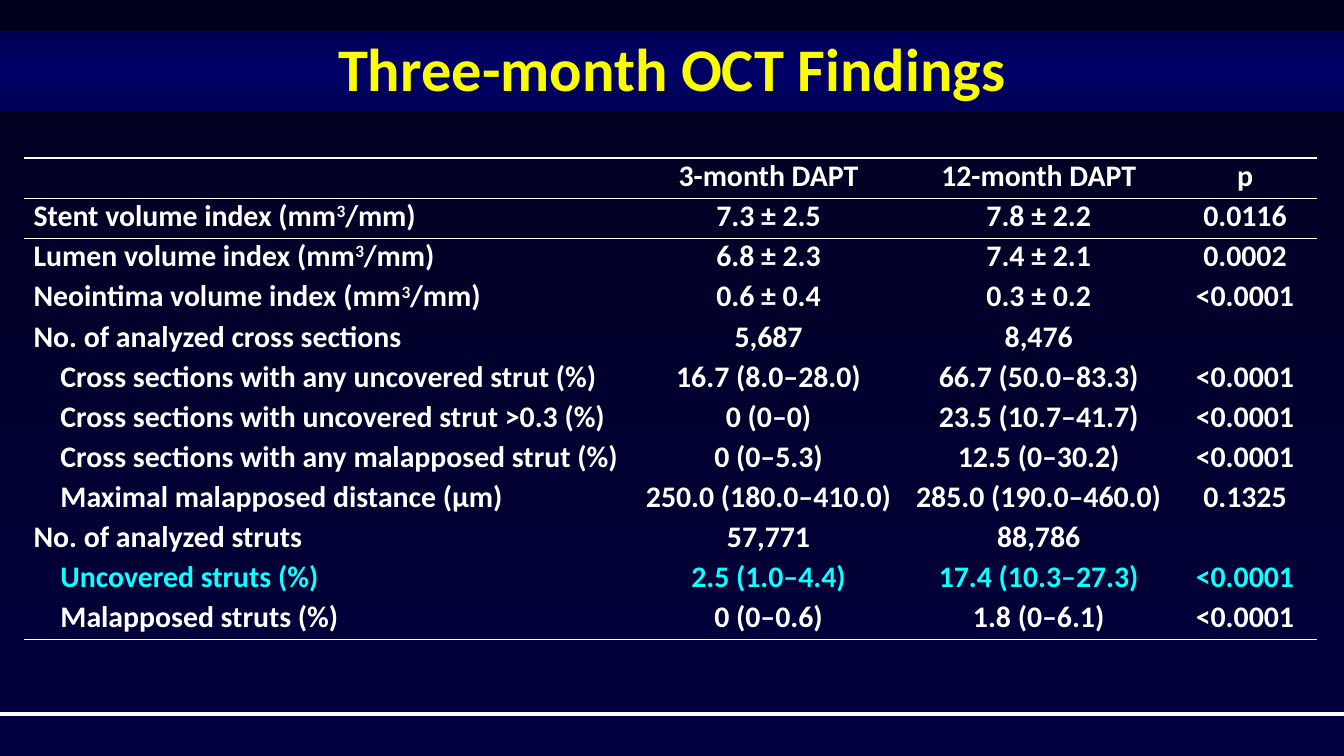
import copy

import pptx
import pptx.dml.color
import pptx.enum.shapes
import pptx.enum.text
import pptx.oxml.ns
import pptx.oxml.xmlchemy
import pptx.util

Pt = pptx.util.Pt
RGB = pptx.dml.color.RGBColor
ALIGN = pptx.enum.text.PP_ALIGN
qn = pptx.oxml.ns.qn
new_element = pptx.oxml.xmlchemy.OxmlElement

WHITE = RGB(0xFF, 0xFF, 0xFF)
YELLOW = RGB(0xFA, 0xFD, 0x00)
CYAN = RGB(0x0D, 0xFF, 0xFF)
NIGHT = RGB(0x00, 0x00, 0x1D)
NAVY = RGB(0x00, 0x00, 0x3E)
BAND_EDGE = RGB(0x00, 0x00, 0x57)
BAND_CORE = RGB(0x00, 0x00, 0x66)

SLIDE_W, SLIDE_H = 720, 405
COLUMN_WIDTHS = [326, 145.5, 144, 77]
ROW_HEIGHT = 21.5
INDENT = 14.4
SUPERSCRIPT_MARK = "^"

# Indent level, then the cells; text between two ^ marks is superscript.
FINDINGS = [
    (0, "", "3-month DAPT", "12-month DAPT", "p"),
    (0, "Stent volume index (mm^3^/mm)", "7.3 ± 2.5", "7.8 ± 2.2", "0.0116"),
    (0, "Lumen volume index (mm^3^/mm)", "6.8 ± 2.3", "7.4 ± 2.1", "0.0002"),
    (0, "Neointima volume index (mm^3^/mm)", "0.6 ± 0.4", "0.3 ± 0.2", "<0.0001"),
    (0, "No. of analyzed cross sections", "5,687", "8,476", ""),
    (1, "Cross sections with any uncovered strut (%)", "16.7 (8.0–28.0)", "66.7 (50.0–83.3)", "<0.0001"),
    (1, "Cross sections with uncovered strut >0.3 (%)", "0 (0–0)", "23.5 (10.7–41.7)", "<0.0001"),
    (1, "Cross sections with any malapposed strut (%)", "0 (0–5.3)", "12.5 (0–30.2)", "<0.0001"),
    (1, "Maximal malapposed distance (μm)", "250.0 (180.0–410.0)", "285.0 (190.0–460.0)", "0.1325"),
    (0, "No. of analyzed struts", "57,771", "88,786", ""),
    (1, "Uncovered struts (%)", "2.5 (1.0–4.4)", "17.4 (10.3–27.3)", "<0.0001"),
    (1, "Malapposed struts (%)", "0 (0–0.6)", "1.8 (0–6.1)", "<0.0001"),
]
HIGHLIGHTED_ROW = 10
RULED_BELOW = {0, 1, len(FINDINGS) - 1}


class SlideBuilder:
    font_name = "Calibri"
    title_size = 32.4
    table_size = 16
    rule_width = 1

    def __init__(self, slide):
        self.slide = slide

    def style_font(self, font, size, color):
        font.name = self.font_name
        font.size = Pt(size)
        font.bold = True
        font.color.rgb = color

    def color_stops(self, fill, colors):
        """Spread the colours evenly, from top to bottom."""
        fill.gradient_angle = 270
        for i, (stop, color) in enumerate(zip(fill.gradient_stops, colors)):
            stop.position = i / (len(colors) - 1)
            stop.color.rgb = color

    def background(self, top, bottom):
        fill = self.slide.background.fill
        fill.gradient()
        self.color_stops(fill, [top, bottom])

    def rule(self, y, width):
        line = self.slide.shapes.add_connector(
            pptx.enum.shapes.MSO_CONNECTOR.STRAIGHT, 0, Pt(y), Pt(SLIDE_W), Pt(y))
        line.line.color.rgb = WHITE
        line.line.width = Pt(width)
        line._element.spPr.append(new_element("a:effectLst"))

    def title_band(self, text, top, height):
        band = self.slide.shapes.add_shape(
            pptx.enum.shapes.MSO_SHAPE.RECTANGLE, 0, Pt(top), Pt(SLIDE_W), Pt(height))
        band.shadow.inherit = False
        band.line.fill.background()
        band.fill.gradient()
        first_stop = band._element.spPr.find(".//" + qn("a:gs"))
        first_stop.addnext(copy.deepcopy(first_stop))
        self.color_stops(band.fill, [BAND_EDGE, BAND_CORE, BAND_EDGE])

        frame = band.text_frame
        frame.word_wrap = True
        frame.vertical_anchor = pptx.enum.text.MSO_ANCHOR.MIDDLE
        frame.text = text
        heading = frame.paragraphs[0]
        heading.alignment = ALIGN.CENTER
        heading.line_spacing = 0.9
        self.style_font(heading.runs[0].font, self.title_size, YELLOW)

    def cell_borders(self, cell, ruled_sides):
        properties = cell._tc.get_or_add_tcPr()
        for i, side in enumerate("LRTB"):
            border = new_element("a:ln" + side)
            border.set("w", str(Pt(self.rule_width)))
            if side in ruled_sides:
                paint = new_element("a:solidFill")
                color = new_element("a:srgbClr")
                color.set("val", str(WHITE))
                paint.append(color)
            else:
                paint = new_element("a:noFill")
            border.append(paint)
            properties.insert(i, border)

    def cell_text(self, cell, text, color, alignment, indent):
        cell.margin_left = cell.margin_right = Pt(5)
        cell.margin_top = cell.margin_bottom = 0
        paragraph = cell.text_frame.paragraphs[0]
        paragraph.alignment = alignment
        if indent:
            paragraph._p.get_or_add_pPr().set("marL", str(Pt(indent)))
        if not text:
            # An empty cell keeps the table's text size so its row does not grow.
            end = new_element("a:endParaRPr")
            end.set("sz", str(self.table_size * 100))
            paragraph._p.append(end)
            return
        for i, part in enumerate(text.split(SUPERSCRIPT_MARK)):
            run = paragraph.add_run()
            run.text = part
            self.style_font(run.font, self.table_size, color)
            if i % 2:
                run.font._element.set("baseline", "30000")

    def findings_table(self, left, top):
        table = self.slide.shapes.add_table(
            len(FINDINGS), len(COLUMN_WIDTHS), Pt(left), Pt(top),
            Pt(sum(COLUMN_WIDTHS)), Pt(ROW_HEIGHT * len(FINDINGS))).table
        table.first_row = table.horz_banding = False
        for column, width in zip(table.columns, COLUMN_WIDTHS):
            column.width = Pt(width)
        for r, (level, *texts) in enumerate(FINDINGS):
            table.rows[r].height = Pt(ROW_HEIGHT)
            color = CYAN if r == HIGHLIGHTED_ROW else WHITE
            ruled_sides = ("T" if r == 0 or r - 1 in RULED_BELOW else "") + (
                "B" if r in RULED_BELOW else "")
            for c, text in enumerate(texts):
                cell = table.cell(r, c)
                cell.fill.background()
                self.cell_borders(cell, ruled_sides)
                self.cell_text(cell, text, color,
                               ALIGN.CENTER if c else ALIGN.LEFT,
                               0 if c else level * INDENT)


def main():
    deck = pptx.Presentation()
    deck.slide_width, deck.slide_height = Pt(SLIDE_W), Pt(SLIDE_H)
    builder = SlideBuilder(deck.slides.add_slide(deck.slide_layouts[6]))
    builder.background(NIGHT, NAVY)
    builder.rule(382.5, 1.75)
    builder.title_band("Three-month OCT Findings", 16.5, 43.5)
    builder.findings_table(13, 84.75)
    deck.save("out.pptx")


if __name__ == "__main__":
    main()
